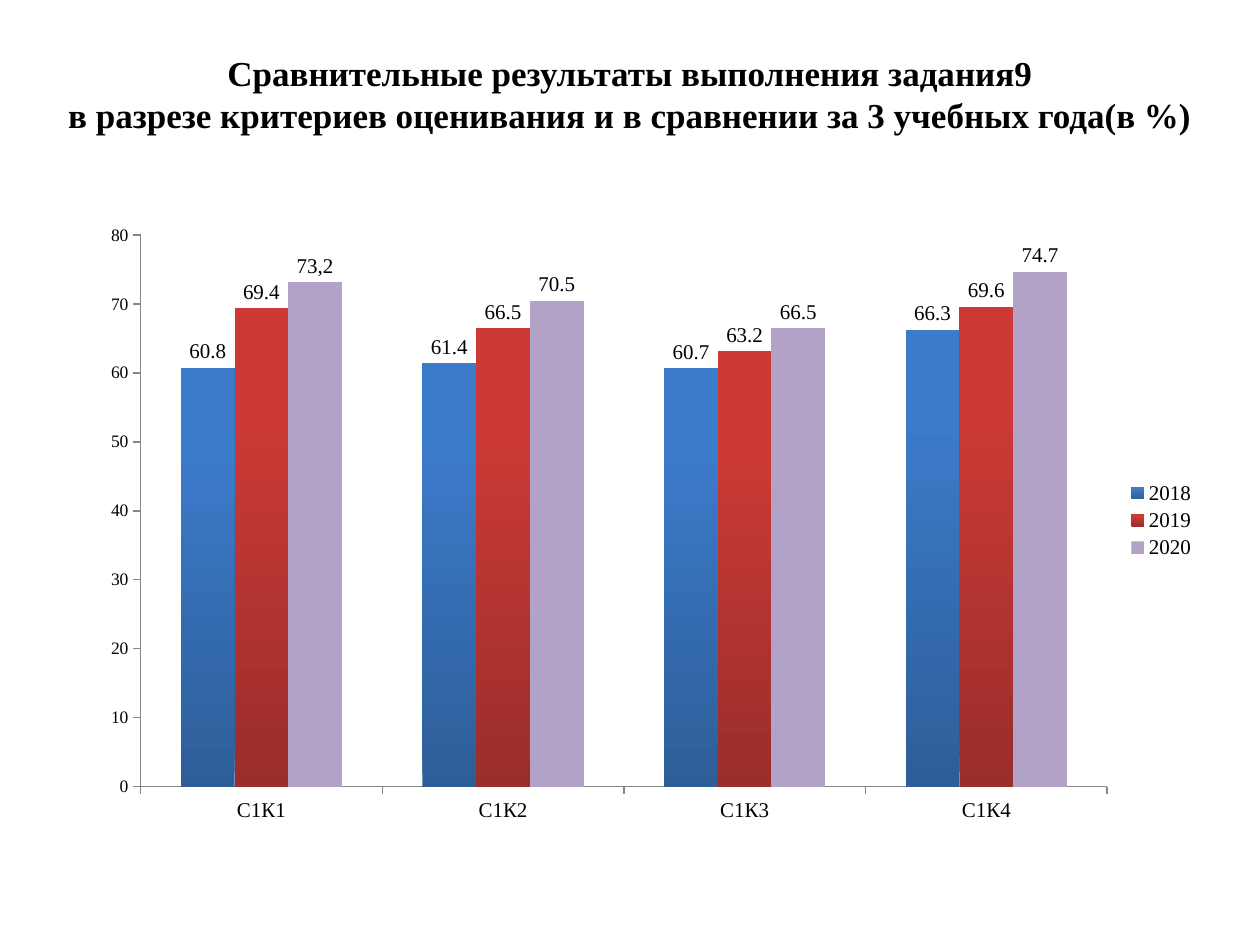
from dataclasses import dataclass

from lxml.etree import SubElement
from pptx import Presentation
from pptx.chart.data import CategoryChartData
from pptx.dml.color import RGBColor
from pptx.enum.chart import XL_CHART_TYPE, XL_LABEL_POSITION, XL_LEGEND_POSITION, XL_TICK_MARK
from pptx.enum.text import MSO_ANCHOR, PP_ALIGN
from pptx.oxml import parse_xml
from pptx.oxml.ns import nsdecls, qn
from pptx.util import Inches, Pt


@dataclass(frozen=True)
class Theme:
    font: str = "Times New Roman"
    text: RGBColor = RGBColor(0x00, 0x00, 0x00)
    axis: RGBColor = RGBColor(0x86, 0x86, 0x86)
    blue: tuple = (RGBColor(0x2D, 0x5E, 0x98), RGBColor(0x3C, 0x7A, 0xCA))
    red: tuple = (RGBColor(0x9A, 0x2E, 0x2B), RGBColor(0xCD, 0x3A, 0x36))
    lilac: tuple = (RGBColor(0xB3, 0xA2, 0xC7),)
    title_size: Pt = Pt(20)
    label_size: Pt = Pt(12)
    scale_size: Pt = Pt(10)


theme = Theme()


def style_font(font, size, bold=False):
    font.name = theme.font
    font.size = size
    font.bold = bold
    font.color.rgb = theme.text


presentation = Presentation()
presentation.slide_width = Inches(10)
presentation.slide_height = Inches(7.5)
slide = presentation.slides.add_slide(presentation.slide_layouts[5])

title = slide.shapes.title
title.left, title.top = Inches(0.41), Inches(0.36)
title.width, title.height = Inches(9.18), Inches(0.77)
title_frame = title.text_frame
title_frame.text = (
    "Сравнительные результаты выполнения задания9\n"
    "в разрезе критериев оценивания и в сравнении за 3 учебных года(в %)"
)
title_frame.word_wrap = False
title_frame.vertical_anchor = MSO_ANCHOR.MIDDLE
for paragraph in title_frame.paragraphs:
    paragraph.alignment = PP_ALIGN.CENTER
    style_font(paragraph.runs[0].font, theme.title_size, bold=True)

results = {
    "2018": ((60.8, 61.4, 60.7, 66.3), theme.blue),
    "2019": ((69.4, 66.5, 63.2, 69.6), theme.red),
    "2020": ((73.2, 70.5, 66.5, 74.7), theme.lilac),
}
chart_data = CategoryChartData()
chart_data.categories = ["С1К1", "С1К2", "С1К3", "С1К4"]
for year, (values, colors) in results.items():
    chart_data.add_series(year, values)

chart = slide.shapes.add_chart(
    XL_CHART_TYPE.COLUMN_CLUSTERED,
    Inches(0.67), Inches(1.67), Inches(8.92), Inches(4.92),
    chart_data,
).chart
chart.has_title = False
style_font(chart.font, theme.scale_size)

chart.has_legend = True
chart.legend.position = XL_LEGEND_POSITION.RIGHT
chart.legend.include_in_layout = False
style_font(chart.legend.font, theme.label_size)

value_axis = chart.value_axis
value_axis.minimum_scale, value_axis.maximum_scale, value_axis.major_unit = 0, 80, 10
value_axis.has_major_gridlines = False
for axis, size in ((chart.category_axis, theme.label_size), (value_axis, theme.scale_size)):
    axis.major_tick_mark = XL_TICK_MARK.OUTSIDE
    axis.minor_tick_mark = XL_TICK_MARK.NONE
    axis.format.line.color.rgb = theme.axis
    style_font(axis.tick_labels.font, size)

plot = chart.plots[0]
plot.gap_width = 150
plot.overlap = 0
plot.vary_by_categories = False
for series, (values, colors) in zip(plot.series, results.values()):
    fill = series.format.fill
    if len(colors) == 1:
        fill.solid()
        fill.fore_color.rgb = colors[0]
    else:
        fill.gradient()
        fill.gradient_angle = 90
        for stop, color, position in zip(fill.gradient_stops, colors, (0, 0.8)):
            stop.color.rgb = color
            stop.position = position
    labels = series.data_labels
    labels.show_value = True
    labels.position = XL_LABEL_POSITION.OUTSIDE_END
    labels.number_format = "0.0"
    labels.number_format_is_linked = False
    style_font(labels.font, theme.label_size)

custom_label = plot.series[2].points[0].data_label
custom_label.text_frame.text = "73,2"
custom_label.position = XL_LABEL_POSITION.OUTSIDE_END
style_font(custom_label.text_frame.paragraphs[0].runs[0].font, theme.label_size)

plot_area = chart.element.find(".//" + qn("c:plotArea"))
for layout in plot_area.findall(qn("c:layout")):
    plot_area.remove(layout)
layout = parse_xml(f"<c:layout {nsdecls('c')}><c:manualLayout/></c:layout>")
settings = {
    "layoutTarget": "inner", "xMode": "edge", "yMode": "edge",
    "x": "0.05", "y": "0.04", "w": "0.86", "h": "0.89",
}
for name, value in settings.items():
    SubElement(layout[0], qn(f"c:{name}")).set("val", value)
plot_area.insert(0, layout)

presentation.save("out.pptx")
